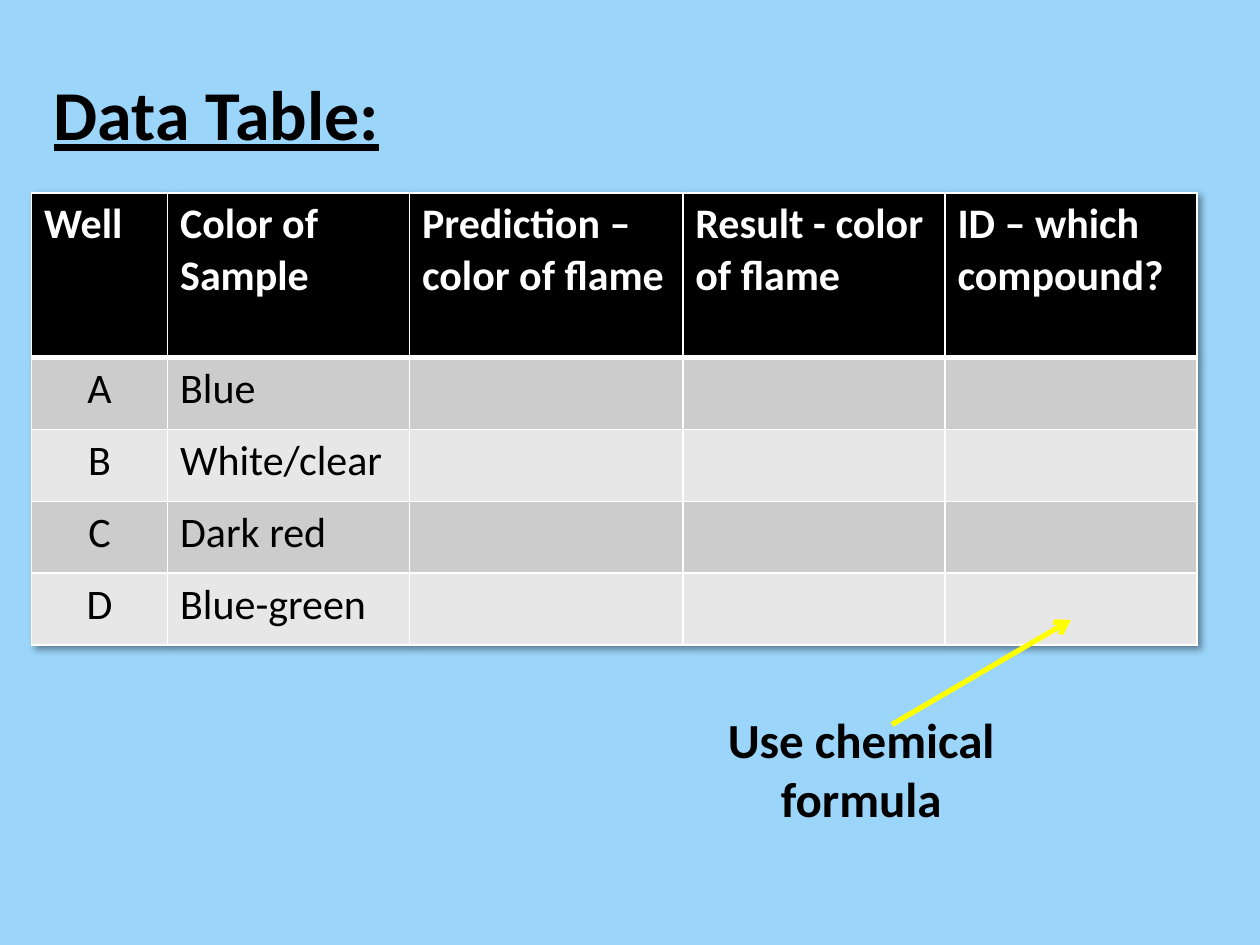
"""Build the flame test data table slide."""
from lxml.etree import SubElement
from pptx import Presentation
from pptx.dml.color import RGBColor
from pptx.enum.shapes import MSO_CONNECTOR
from pptx.enum.text import PP_ALIGN
from pptx.oxml import parse_xml
from pptx.oxml.ns import nsdecls, qn
from pptx.util import Inches, Pt

COLORS = {
    "background": "9BD5FA",
    "black": "000000",
    "white": "FFFFFF",
    "band_dark": "CCCCCC",
    "band_light": "E7E7E7",
    "arrow": "FFFF00",
}
HEADINGS = ["Well", "Color of Sample", "Prediction – color of flame",
            "Result - color of flame", "ID – which compound?"]
SAMPLES = ["Blue", "White/clear", "Dark red", "Blue-green"]
COLUMN_WIDTHS = [1.08, 1.92, 2.17, 2.08, 2]
ROW_HEIGHTS = [1.31] + [0.57] * len(SAMPLES)


def write(frame, text, size, color="black", bold=True, align=PP_ALIGN.LEFT):
    frame.word_wrap = True
    paragraph = frame.paragraphs[0]
    paragraph.text = text
    paragraph.alignment = align
    font = paragraph.font
    font.name = "Calibri"
    font.size = Pt(size)
    font.bold = bold
    font.color.rgb = RGBColor.from_string(COLORS[color])
    return paragraph


def add_borders(cell, bottom_width):
    properties = cell._tc.get_or_add_tcPr()
    widths = {"lnL": 1, "lnR": 1, "lnT": 1, "lnB": bottom_width}
    for position, (side, width) in enumerate(widths.items()):
        properties.insert(position, parse_xml(
            f'<a:{side} {nsdecls("a")} w="{Pt(width)}"><a:solidFill>'
            f'<a:srgbClr val="{COLORS["white"]}"/></a:solidFill></a:{side}>'))


prs = Presentation()
prs.slide_width, prs.slide_height = Inches(10), Inches(7.5)
slide = prs.slides.add_slide(prs.slide_layouts[6])
slide.background.fill.solid()
slide.background.fill.fore_color.rgb = RGBColor.from_string(COLORS["background"])

title = slide.shapes.add_textbox(Inches(0.33), Inches(0.51), Inches(9), Inches(6.12))
write(title.text_frame, "Data Table:", 40).font.underline = True

rows = [HEADINGS] + [[well, sample, "", "", ""] for well, sample in zip("ABCD", SAMPLES)]
table = slide.shapes.add_table(
    len(rows), len(HEADINGS), Inches(0.25), Inches(1.53),
    Inches(sum(COLUMN_WIDTHS)), Inches(sum(ROW_HEIGHTS))).table
for column, width in zip(table.columns, COLUMN_WIDTHS):
    column.width = Inches(width)
for row, height in zip(table.rows, ROW_HEIGHTS):
    row.height = Inches(height)

for r, texts in enumerate(rows):
    header = r == 0
    fill = "black" if header else "band_dark" if r % 2 else "band_light"
    for c, text in enumerate(texts):
        cell = table.cell(r, c)
        cell.fill.solid()
        cell.fill.fore_color.rgb = RGBColor.from_string(COLORS[fill])
        add_borders(cell, 3 if header else 1)
        write(cell.text_frame, text, 24, "white" if header else "black", header,
              PP_ALIGN.CENTER if c == 0 and not header else PP_ALIGN.LEFT)

table._tbl.tblPr.insert(0, parse_xml(
    f'<a:effectLst {nsdecls("a")}><a:outerShdw blurRad="{Pt(4)}" dist="{Pt(3)}" '
    f'dir="2700000" algn="tl" rotWithShape="0"><a:srgbClr val="{COLORS["black"]}">'
    '<a:alpha val="40000"/></a:srgbClr></a:outerShdw></a:effectLst>'))

arrow = slide.shapes.add_connector(
    MSO_CONNECTOR.STRAIGHT, Inches(7.08), Inches(5.75), Inches(8.5), Inches(4.92))
arrow.line.color.rgb = RGBColor.from_string(COLORS["arrow"])
arrow.line.width = Pt(3)
SubElement(arrow.line._get_or_add_ln(), qn("a:tailEnd"), type="arrow")
SubElement(arrow._element.spPr, qn("a:effectLst"))

hint = slide.shapes.add_textbox(Inches(5.42), Inches(5.58), Inches(2.83), Inches(1.04))
write(hint.text_frame, "Use chemical formula", 28, align=PP_ALIGN.CENTER)

prs.save("out.pptx")
